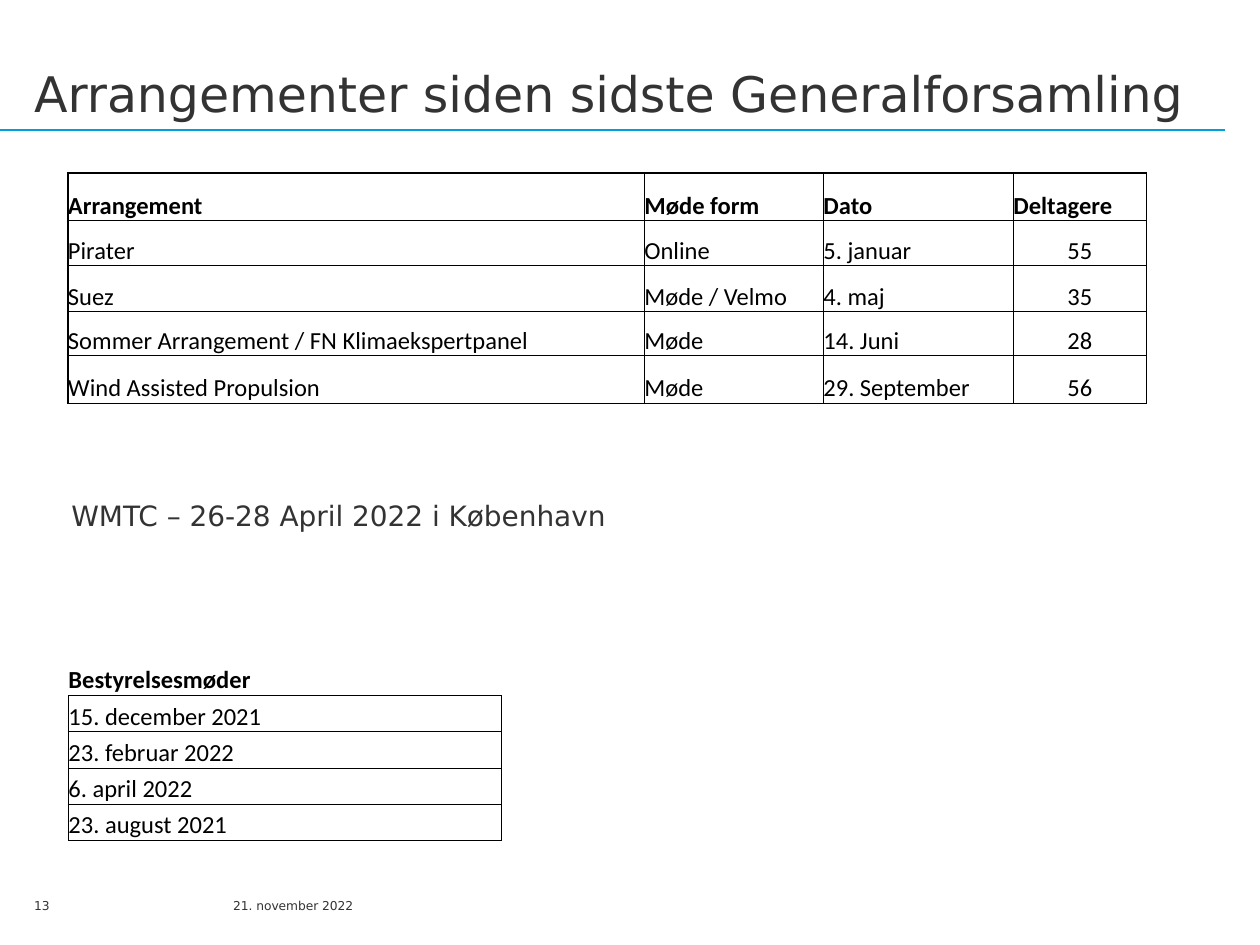
import pptx
import pptx.util
import pptx.dml.color
import pptx.enum.shapes
import pptx.enum.text
import pptx.oxml
import pptx.oxml.ns
from dataclasses import dataclass

Cm, Pt = pptx.util.Cm, pptx.util.Pt
Color = pptx.dml.color.RGBColor.from_string
Align = pptx.enum.text.PP_ALIGN
Anchor = pptx.enum.text.MSO_ANCHOR


@dataclass(frozen=True)
class Theme:
    ink: str = "333333"
    black: str = "000000"
    rule: str = "009FDA"
    sans: str = "DejaVu Sans"
    grid: str = "Calibri"
    title: int = 28
    body: int = 16
    cell: int = 14
    foot: int = 7
    thin: float = 0.5
    thick: float = 1


THEME = Theme()
EVENTS = [
    ("Arrangement", "Møde form", "Dato", "Deltagere"),
    ("Pirater", "Online", "5. januar", "55"),
    ("Suez", "Møde / Velmo", "4. maj", "35"),
    ("Sommer Arrangement / FN Klimaekspertpanel", "Møde", "14. Juni", "28"),
    ("Wind Assisted Propulsion", "Møde", "29. September", "56"),
]
BOARD = [
    ("Bestyrelsesmøder",),
    ("15. december 2021",),
    ("23. februar 2022",),
    ("6. april 2022",),
    ("23. august 2021",),
]


def assign(target, values):
    for name, value in values.items():
        setattr(target, name, value)


def style(run, font, size, color, bold=False):
    assign(run.font, {"name": font, "size": Pt(size), "bold": bold})
    run.font.color.rgb = Color(color)


def add_text(slide, text, box, size, pad=(0, 0), **form):
    """Place one line of text; pad is the side and the top inset in cm."""
    frame = slide.shapes.add_textbox(*map(Cm, box)).text_frame
    side, top = map(Cm, pad)
    assign(frame, {
        "word_wrap": True, "vertical_anchor": Anchor.TOP,
        "margin_left": side, "margin_right": side,
        "margin_top": top, "margin_bottom": top,
    })
    para = frame.paragraphs[0]
    assign(para, form)
    run = para.add_run()
    run.text = text
    style(run, THEME.sans, size, THEME.ink)


def add_rule(slide, left, right, y):
    kind = pptx.enum.shapes.MSO_CONNECTOR.STRAIGHT
    line = slide.shapes.add_connector(kind, Cm(left), Cm(y), Cm(right), Cm(y))
    line.line.color.rgb = Color(THEME.rule)
    line.line.width = Pt(THEME.thick)
    props = line._element.spPr
    props.append(pptx.oxml.parse_xml(
        f'<a:effectLst {pptx.oxml.ns.nsdecls("a")}/>'))


def set_edges(cell, edges):
    """Draw the cell borders; a width of 0 leaves a side open."""
    props = cell._tc.get_or_add_tcPr()
    for spot, side in enumerate("LRTB"):
        width = edges[side]
        fill = (f'<a:solidFill><a:srgbClr val="{THEME.black}"/></a:solidFill>'
                if width else "<a:noFill/>")
        props.insert(spot, pptx.oxml.parse_xml(
            f'<a:ln{side} {pptx.oxml.ns.nsdecls("a")} w="{Pt(width)}">'
            f"{fill}</a:ln{side}>"))


def add_grid(slide, rows, left, top, widths, heights, edge, center=()):
    """Build a table; edge(row, col) gives the border widths of a cell."""
    shape = slide.shapes.add_table(
        len(rows), len(widths), Cm(left), Cm(top),
        Cm(sum(widths)), Cm(sum(heights)))
    table = shape.table
    assign(table, {"first_row": False, "horz_banding": False})
    for col, width in zip(table.columns, widths):
        col.width = Cm(width)
    for row, height in zip(table.rows, heights):
        row.height = Cm(height)
    for r, line in enumerate(rows):
        for c, text in enumerate(line):
            cell = table.cell(r, c)
            assign(cell, {
                "margin_left": 0, "margin_right": 0, "margin_top": 0,
                "margin_bottom": 0, "vertical_anchor": Anchor.BOTTOM,
            })
            cell.fill.background()
            para = cell.text_frame.paragraphs[0]
            if r and c in center:
                para.alignment = Align.CENTER
            run = para.add_run()
            run.text = text
            style(run, THEME.grid, THEME.cell, THEME.black, bold=r == 0)
            set_edges(cell, edge(r, c))


def event_edge(row, col):
    """Thick around the table and below its head, thin elsewhere."""
    thick = {
        "L": col == 0, "R": col == len(EVENTS[0]) - 1,
        "T": row <= 1, "B": row in (0, len(EVENTS) - 1),
    }
    return {side: THEME.thick if on else THEME.thin
            for side, on in thick.items()}


def board_edge(row, col):
    """Only the lower side of the head is drawn."""
    return {side: THEME.thin if row or side == "B" else 0 for side in "LRTB"}


def main():
    deck = pptx.Presentation()
    assign(deck, {"slide_width": Cm(25.4), "slide_height": Cm(19.05)})
    slide = deck.slides.add_slide(deck.slide_layouts[6])
    loose = {"line_spacing": 1.13, "space_before": Pt(6)}

    add_rule(slide, 0, 24.69, 2.62)
    add_text(slide, "21. november 2022", (4.7, 18.11, 7.8, 0.51), THEME.foot)
    add_text(slide, "13", (0.69, 18.11, 0.66, 0.51), THEME.foot)
    add_text(slide, "Arrangementer siden sidste Generalforsamling",
             (0.69, 1.12, 23.9, 1.22), THEME.title, **loose)
    add_text(slide, "WMTC – 26-28 April 2022 i København",
             (1.19, 9.83, 12.7, 1.93), THEME.body, pad=(0.25, 0.13), **loose)
    add_grid(slide, EVENTS, 1.37, 3.49, (11.62, 3.61, 3.83, 2.68),
             (0.96, 0.91, 0.92, 0.89, 0.96), event_edge, center=(3,))
    add_grid(slide, BOARD, 1.38, 13.29, (8.72,), (0.73,) * len(BOARD),
             board_edge)
    deck.save("out.pptx")


if __name__ == "__main__":
    main()
